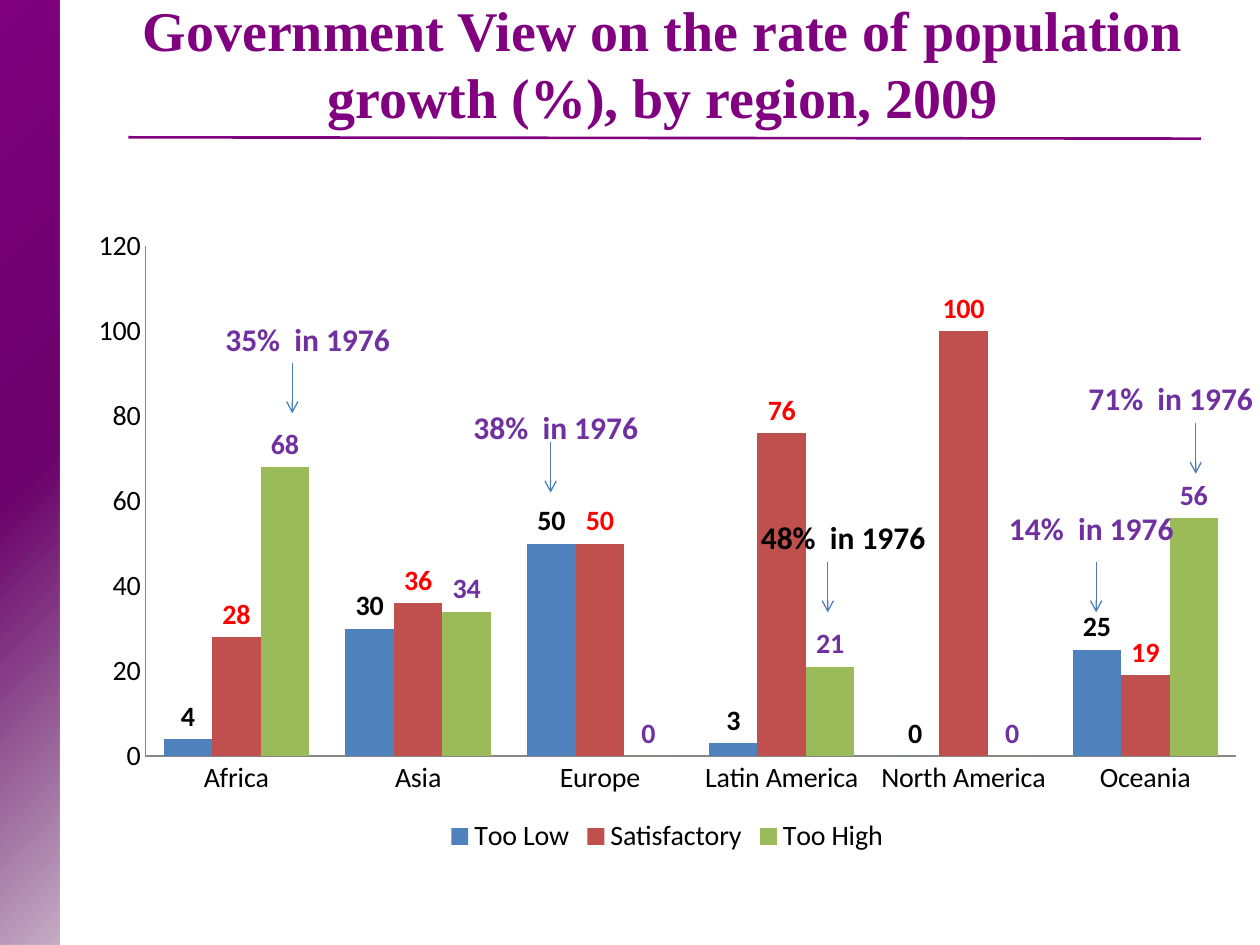
import pptx
import pptx.chart.data
import pptx.dml.color
import pptx.enum.chart
import pptx.enum.shapes
import pptx.enum.text
import pptx.oxml
import pptx.oxml.ns
import pptx.util
from lxml import etree

Inches = pptx.util.Inches
Pt = pptx.util.Pt
PURPLE, VIOLET, BLACK = "800080", "7030A0", "000000"
REGIONS = ["Africa", "Asia", "Europe", "Latin America", "North America", "Oceania"]
# name, values, bar colour, label colour
SERIES = [
    ("Too Low", (4, 30, 50, 3, 0, 25), "4F81BD", BLACK),
    ("Satisfactory", (28, 36, 50, 76, 100, 19), "C0504D", "FF0000"),
    ("Too High", (68, 34, 0, 21, 0, 56), "9BBB59", VIOLET),
]
# share, text left, text top, text colour, arrow x, arrow top
NOTES = [
    ("35%", 1.69, 2.49, VIOLET, 2.32, 2.88),
    ("38%", 3.66, 3.19, VIOLET, 4.37, 3.51),
    ("48%", 5.94, 4.06, BLACK, 6.57, 4.46),
    ("71%", 8.54, 2.96, VIOLET, 9.49, 3.36),
    ("14%", 7.91, 3.99, VIOLET, 8.7, 4.46),
]


def rgb(code):
    return pptx.dml.color.RGBColor.from_string(code)


def style(font, size, color, bold=False, face="Calibri"):
    font.size, font.bold, font.name = Pt(size), bold, face
    font.color.rgb = rgb(color)


def add_band(slide):
    """Side band with a radial fade towards its lower right corner."""
    band = slide.shapes.add_shape(
        pptx.enum.shapes.MSO_SHAPE.RECTANGLE, 0, 0, Inches(0.47), Inches(7.5))
    band.shadow.inherit = False
    band.line.fill.background()
    fade = pptx.oxml.parse_xml(
        f'<a:gradFill {pptx.oxml.ns.nsdecls("a")} rotWithShape="1"><a:gsLst>'
        '<a:gs pos="0"><a:srgbClr val="4C004C"><a:alpha val="32000"/></a:srgbClr></a:gs>'
        '<a:gs pos="50000"><a:srgbClr val="6C006C"/></a:gs>'
        '<a:gs pos="100000"><a:srgbClr val="800080"/></a:gs></a:gsLst>'
        '<a:path path="circle"><a:fillToRect l="100000" t="100000"/></a:path>'
        '</a:gradFill>')
    band._element.spPr.find(pptx.oxml.ns.qn("a:prstGeom")).addnext(fade)


def add_line(slide, start, end, color, width, arrow=False):
    line = slide.shapes.add_connector(
        pptx.enum.shapes.MSO_CONNECTOR.STRAIGHT,
        *(Inches(v) for v in (*start, *end)))
    line.line.color.rgb = rgb(color)
    line.line.width = Pt(width)
    if arrow:
        tail = etree.SubElement(line.line._get_or_add_ln(), pptx.oxml.ns.qn("a:tailEnd"))
        tail.set("type", "arrow")
    etree.SubElement(line._element.spPr, pptx.oxml.ns.qn("a:effectLst"))


def add_text(slide, text, box, size, color, face="Calibri", wrap=False):
    frame = slide.shapes.add_textbox(*(Inches(v) for v in box)).text_frame
    frame.word_wrap = wrap
    frame.text = text
    style(frame.paragraphs[0].runs[0].font, size, color, True, face)
    return frame


def add_title(slide):
    frame = add_text(
        slide, "Government View on the rate of population growth (%), by region, 2009",
        (1.02, 0.06, 8.48, 1.02), 32, PURPLE, "Times New Roman", True)
    frame.vertical_anchor = pptx.enum.text.MSO_ANCHOR.BOTTOM
    frame.paragraphs[0].alignment = pptx.enum.text.PP_ALIGN.CENTER


def set_plot(chart, **area):
    """Fix the inner plot area, in fractions of the chart."""
    spots = "".join(f'<c:{key} val="{val}"/>' for key, val in area.items())
    layout = pptx.oxml.parse_xml(
        f'<c:layout {pptx.oxml.ns.nsdecls("c")}><c:manualLayout>'
        '<c:layoutTarget val="inner"/><c:xMode val="edge"/><c:yMode val="edge"/>'
        f'{spots}</c:manualLayout></c:layout>')
    plot = chart._chartSpace.chart.plotArea
    for old in plot.findall(pptx.oxml.ns.qn("c:layout")):
        plot.remove(old)
    plot.insert(0, layout)


def style_axis(axis):
    axis.has_major_gridlines = False
    axis.major_tick_mark = pptx.enum.chart.XL_TICK_MARK.NONE
    axis.minor_tick_mark = pptx.enum.chart.XL_TICK_MARK.NONE
    axis.format.line.color.rgb = rgb("868686")
    style(axis.tick_labels.font, 16, BLACK)


def add_bars(slide):
    data = pptx.chart.data.CategoryChartData()
    data.categories = REGIONS
    for name, values, *_ in SERIES:
        data.add_series(name, values)
    chart = slide.shapes.add_chart(
        pptx.enum.chart.XL_CHART_TYPE.COLUMN_CLUSTERED,
        Inches(0.59), Inches(1.7), Inches(9.41), Inches(5.12), data).chart
    style(chart.font, 10, BLACK)
    chart.has_title = False
    chart.has_legend = True
    chart.legend.position = pptx.enum.chart.XL_LEGEND_POSITION.BOTTOM
    chart.legend.include_in_layout = False
    style(chart.legend.font, 16, BLACK)
    for axis in (chart.category_axis, chart.value_axis):
        style_axis(axis)
    scale = chart.value_axis
    scale.minimum_scale, scale.maximum_scale, scale.major_unit = 0, 120, 20
    plot = chart.plots[0]
    plot.gap_width, plot.overlap = 75, 0
    plot.vary_by_categories = False
    for series, (_, _, fill, color) in zip(plot.series, SERIES):
        series.format.fill.solid()
        series.format.fill.fore_color.rgb = rgb(fill)
        series.invert_if_negative = False
        labels = series.data_labels
        labels.show_value = True
        labels.position = pptx.enum.chart.XL_LABEL_POSITION.OUTSIDE_END
        style(labels.font, 16, color, True)
    set_plot(chart, x=0.06, y=0.05, w=0.92, h=0.79)


def add_note(slide, share, left, top, color, x, y):
    add_text(slide, f"{share}  in 1976", (left, top, 1.57, 0.4), 18, color)
    add_line(slide, (x, y), (x, y + 0.4), "4B7EBC", 0.75, arrow=True)


def main():
    deck = pptx.Presentation()
    deck.slide_width, deck.slide_height = Inches(10), Inches(7.5)
    slide = deck.slides.add_slide(deck.slide_layouts[6])
    add_band(slide)
    add_line(slide, (9.53, 1.1), (1.02, 1.09), PURPLE, 1.5)
    add_title(slide)
    add_bars(slide)
    for note in NOTES:
        add_note(slide, *note)
    deck.save("out.pptx")


if __name__ == "__main__":
    main()
